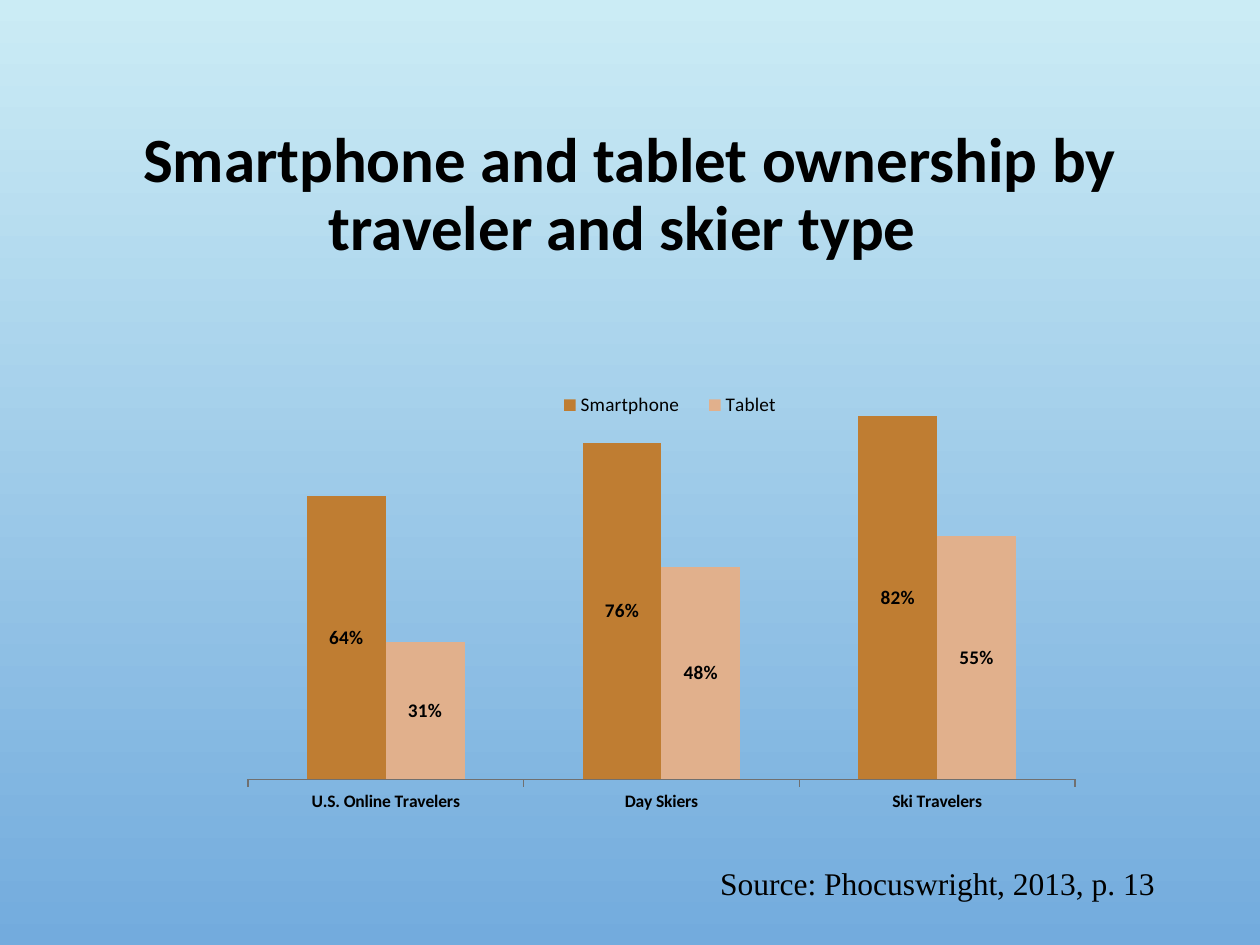
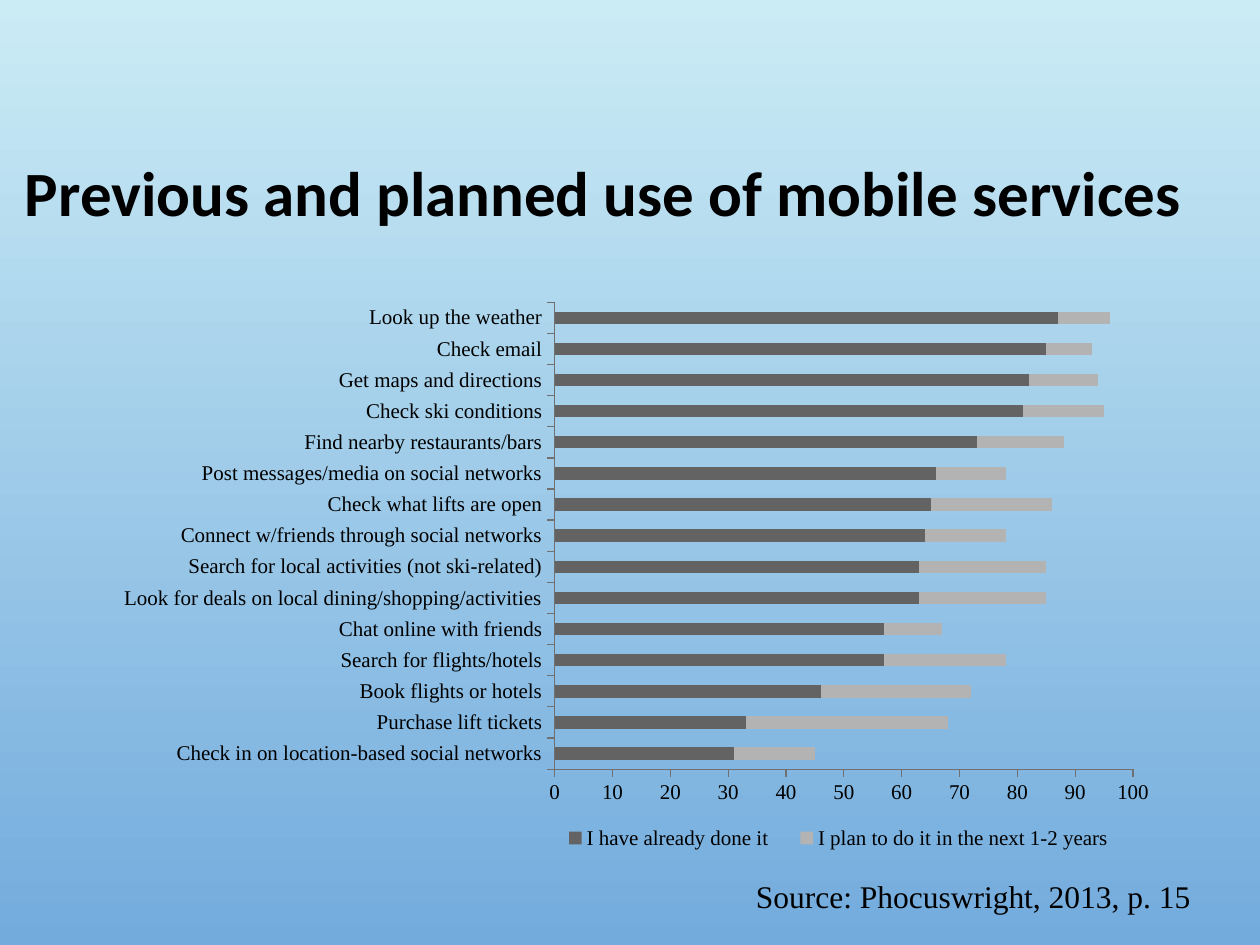
from lxml import etree
from pptx import Presentation
from pptx.chart.data import CategoryChartData
from pptx.dml.color import RGBColor
from pptx.enum.chart import XL_CHART_TYPE as ChartType
from pptx.enum.chart import XL_LABEL_POSITION as LabelPos
from pptx.enum.chart import XL_LEGEND_POSITION as LegendPos
from pptx.enum.chart import XL_TICK_MARK as Tick
from pptx.enum.text import MSO_ANCHOR as Anchor
from pptx.enum.text import MSO_AUTO_SIZE as AutoSize
from pptx.enum.text import PP_ALIGN as Align
from pptx.oxml.ns import qn
from pptx.util import Cm, Pt

SKY_TOP = RGBColor(0xCB, 0xEC, 0xF5)
SKY_BOTTOM = RGBColor(0x73, 0xAB, 0xDD)
BLACK = RGBColor(0, 0, 0)
AXIS_GRAY = RGBColor(0x70, 0x70, 0x70)
BRONZE = RGBColor(0xBF, 0x7D, 0x32)
SAND = RGBColor(0xE1, 0xB0, 0x8C)
DARK_GRAY = RGBColor(0x63, 0x63, 0x63)
LIGHT_GRAY = RGBColor(0xB3, 0xB3, 0xB3)
SANS, SERIF = "Calibri", "Times New Roman"

OWNERSHIP = [
    ("U.S. Online Travelers", 0.64, 0.31),
    ("Day Skiers", 0.76, 0.48),
    ("Ski Travelers", 0.82, 0.55),
]
MOBILE_USE = [
    ("Check in on location-based social networks", 31, 14),
    ("Purchase lift tickets", 33, 35),
    ("Book flights or hotels", 46, 26),
    ("Search for flights/hotels", 57, 21),
    ("Chat online with friends", 57, 10),
    ("Look for deals on local dining/shopping/activities", 63, 22),
    ("Search for local activities (not ski-related)", 63, 22),
    ("Connect w/friends through social networks", 64, 14),
    ("Check what lifts are open", 65, 21),
    ("Post messages/media on social networks", 66, 12),
    ("Find nearby restaurants/bars", 73, 15),
    ("Check ski conditions", 81, 14),
    ("Get maps and directions", 82, 12),
    ("Check email", 85, 8),
    ("Look up the weather", 87, 9),
]
SLIDES = [
    dict(
        title="Smartphone and tablet ownership by traveler and skier type ",
        title_box=(1.9, 1.73, 21.59, 4.45),
        source="Source: Phocuswright, 2013, p. 13",
        source_box=(14.27, 17.3, 9.55, 1.02),
        chart=dict(
            kind=ChartType.COLUMN_CLUSTERED, box=(4.65, 6.58, 17.37, 9.93),
            rows=OWNERSHIP, series=[("Smartphone", BRONZE), ("Tablet", SAND)],
            font=SANS, size=10, bold_categories=True, legend_size=11,
            legend_pos=LegendPos.TOP, legend_area=(0.36, 0.13, 0.3, 0.06),
            plot_area=(0.02, 0.11, 0.96, 0.81), top=0.9, step=0.1,
            percent_labels=True, overlap=0),
    ),
    dict(
        title="Previous and planned use of mobile services ",
        title_box=(0, 1.73, 24.61, 4.45),
        source="Source: Phocuswright, 2013, p. 15",
        source_box=(14.99, 17.55, 9.55, 1.02),
        chart=dict(
            kind=ChartType.BAR_STACKED, box=(1.9, 5.49, 21.59, 12.07),
            rows=MOBILE_USE,
            series=[("I have already done it", DARK_GRAY),
                    ("I plan to do it in the next 1-2 years", LIGHT_GRAY)],
            font=SERIF, size=12, bold_categories=False, legend_size=12,
            legend_pos=LegendPos.BOTTOM, legend_area=(0.42, 0.92, 0.55, 0.05),
            plot_area=(0.43, 0.05, 0.54, 0.78), top=100, step=10,
            percent_labels=False, overlap=100),
    ),
]


def style_font(font, name, size, bold=False):
    font.name, font.size, font.bold = name, Pt(size), bold
    font.color.rgb = BLACK


def add_text(slide, text, box, *, font, size, bold=False, align=Align.LEFT,
             anchor=Anchor.TOP, spacing=1.0, wrap=True):
    frame = slide.shapes.add_textbox(*map(Cm, box)).text_frame
    frame.word_wrap = wrap
    frame.auto_size = AutoSize.NONE if wrap else AutoSize.SHAPE_TO_FIT_TEXT
    frame.vertical_anchor = anchor
    paragraph = frame.paragraphs[0]
    paragraph.alignment, paragraph.line_spacing = align, spacing
    run = paragraph.add_run()
    run.text = text
    style_font(run.font, font, size, bold)


def place(part, area, index, inner=False):
    for old in part.findall(qn("c:layout")):
        part.remove(old)
    layout = etree.Element(qn("c:layout"))
    manual = etree.SubElement(layout, qn("c:manualLayout"))
    settings = [("layoutTarget", "inner")] if inner else []
    settings += [("xMode", "edge"), ("yMode", "edge")]
    settings += zip("xywh", area)
    for tag, value in settings:
        etree.SubElement(manual, qn(f"c:{tag}")).set("val", str(value))
    part.insert(index, layout)


def add_bars(slide, *, kind, box, rows, series, font, size, bold_categories,
             legend_size, legend_pos, legend_area, plot_area, top, step,
             percent_labels, overlap):
    categories, *columns = zip(*rows)
    data = CategoryChartData(number_format="0%" if percent_labels else "General")
    data.categories = categories
    for (name, _), values in zip(series, columns):
        data.add_series(name, values)
    chart = slide.shapes.add_chart(kind, *map(Cm, box), data).chart
    chart.has_title = False
    style_font(chart.font, font, size)

    plot = chart.plots[0]
    plot.gap_width, plot.overlap, plot.vary_by_categories = 150, overlap, False
    for bars, (_, color) in zip(plot.series, series):
        bars.invert_if_negative = False
        bars.format.fill.solid()
        bars.format.fill.fore_color.rgb = color
    if percent_labels:
        plot.has_data_labels = True
        labels = plot.data_labels
        labels.show_value, labels.position = True, LabelPos.CENTER
        labels.number_format, labels.number_format_is_linked = "0%", False
        style_font(labels.font, font, 11, True)

    category_axis, value_axis = chart.category_axis, chart.value_axis
    for axis in (category_axis, value_axis):
        axis.has_major_gridlines = False
        axis.major_tick_mark, axis.minor_tick_mark = Tick.OUTSIDE, Tick.NONE
        axis.format.line.color.rgb = AXIS_GRAY
        axis.format.line.width = Pt(0.75)
        style_font(axis.tick_labels.font, font, size)
    category_axis.tick_labels.font.bold = bold_categories
    value_axis.minimum_scale, value_axis.maximum_scale = 0, top
    value_axis.major_unit = step
    value_axis.visible = not percent_labels

    chart.has_legend = True
    legend = chart.legend
    legend.position, legend.include_in_layout = legend_pos, False
    style_font(legend.font, font, legend_size)
    place(legend._element, legend_area, 1)
    place(chart._chartSpace.chart.plotArea, plot_area, 0, inner=True)


def paint_sky(slide):
    fill = slide.background.fill
    fill.gradient()
    fill.gradient_angle = 270
    for stop, position, color in zip(fill.gradient_stops, (0, 1), (SKY_TOP, SKY_BOTTOM)):
        stop.position, stop.color.rgb = position, color


def main():
    deck = Presentation()
    deck.slide_width, deck.slide_height = Cm(25.4), Cm(19.05)
    for content in SLIDES:
        slide = deck.slides.add_slide(deck.slide_layouts[6])
        paint_sky(slide)
        add_text(slide, content["title"], content["title_box"], font=SANS, size=36,
                 bold=True, align=Align.CENTER, anchor=Anchor.MIDDLE, spacing=0.9)
        add_bars(slide, **content["chart"])
        add_text(slide, content["source"], content["source_box"], font=SERIF,
                 size=18, wrap=False)
    deck.save("out.pptx")


if __name__ == "__main__":
    main()
